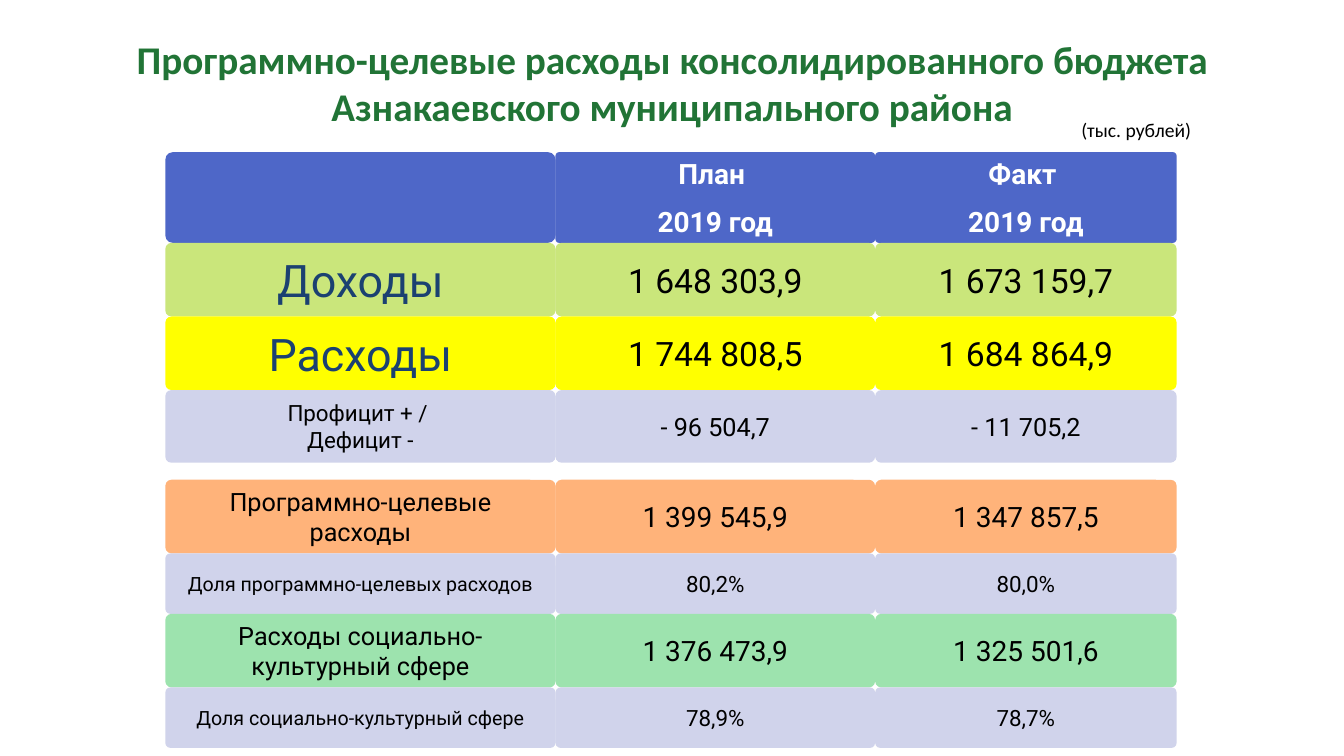
from pptx import Presentation
from pptx.dml.color import RGBColor
from pptx.enum.shapes import MSO_SHAPE
from pptx.enum.text import MSO_ANCHOR, MSO_AUTO_SIZE, PP_ALIGN
from pptx.util import Inches, Pt

GREEN_TITLE = RGBColor(0x21, 0x74, 0x36)
NAVY = RGBColor(0x1B, 0x41, 0x71)
BLACK = RGBColor(0x00, 0x00, 0x00)
WHITE = RGBColor(0xFF, 0xFF, 0xFF)
BLUE = RGBColor(0x4E, 0x67, 0xC8)
LIME = RGBColor(0xCA, 0xE6, 0x7B)
YELLOW = RGBColor(0xFF, 0xFF, 0x00)
LAVENDER = RGBColor(0xD0, 0xD3, 0xEB)
ORANGE = RGBColor(0xFF, 0xB3, 0x7A)
MINT = RGBColor(0x9D, 0xE3, 0xAE)

COLUMN_WIDTHS = (3.87, 3.17, 2.99)
HEADER_HEIGHT = 0.9
HEADERS = ("", "План \n2019 год", "Факт \n2019 год")
SECTION_GAP = 0.17

# Height, fill, label size, label colour, value size, texts
BALANCE_ROWS = (
    (0.73, LIME, 32, NAVY, 24, ("Доходы", "1 648 303,9", "1 673 159,7")),
    (0.73, YELLOW, 32, NAVY, 24, ("Расходы", "1 744 808,5", "1 684 864,9")),
    (0.72, LAVENDER, 16, BLACK, 18,
     ("Профицит + / \nДефицит -", "- 96 504,7", "- 11 705,2")),
)
PROGRAM_ROWS = (
    (0.73, ORANGE, 18, BLACK, 20,
     ("Программно-целевые расходы", "1 399 545,9", "1 347 857,5")),
    (0.6, LAVENDER, 14, BLACK, 16,
     ("Доля программно-целевых расходов", "80,2%", "80,0%")),
    (0.73, MINT, 18, BLACK, 20,
     ("Расходы социально-культурный сфере", "1 376 473,9", "1 325 501,6")),
    (0.6, LAVENDER, 14, BLACK, 16,
     ("Доля социально-культурный сфере", "78,9%", "78,7%")),
)


def write_text(text_frame, text, size, color, font="Roboto", bold=False, space_after=0):
    for index, line in enumerate(text.split("\n")):
        paragraph = text_frame.paragraphs[0] if index == 0 else text_frame.add_paragraph()
        paragraph.alignment = PP_ALIGN.CENTER
        paragraph.space_after = Pt(space_after)
        run = paragraph.add_run()
        run.text = line
        run.font.name = font
        run.font.size = Pt(size)
        run.font.bold = bold
        run.font.color.rgb = color


def add_caption(slide, left, top, width, height, text, **text_format):
    text_box = slide.shapes.add_textbox(
        Inches(left), Inches(top), Inches(width), Inches(height))
    text_box.text_frame.word_wrap = False
    text_box.text_frame.auto_size = MSO_AUTO_SIZE.SHAPE_TO_FIT_TEXT
    write_text(text_box.text_frame, text, font="Calibri", **text_format)


def add_cell(slide, left, top, width, height, fill, text, rounding=0.083, **text_format):
    shape = slide.shapes.add_shape(
        MSO_SHAPE.ROUNDED_RECTANGLE,
        Inches(left), Inches(top), Inches(width), Inches(height))
    shape.adjustments[0] = rounding
    shape.shadow.inherit = False
    shape.fill.solid()
    shape.fill.fore_color.rgb = fill
    shape.line.fill.background()
    text_frame = shape.text_frame
    text_frame.word_wrap = True
    text_frame.vertical_anchor = MSO_ANCHOR.MIDDLE
    text_frame.margin_left = text_frame.margin_right = Inches(0.12)
    if text:
        write_text(text_frame, text, **text_format)


def column_boxes(left):
    for index, width in enumerate(COLUMN_WIDTHS):
        yield left + sum(COLUMN_WIDTHS[:index]), width


def add_header(slide, left, top):
    for (cell_left, width), text in zip(column_boxes(left), HEADERS):
        add_cell(slide, cell_left, top, width, HEADER_HEIGHT, BLUE, text,
                 rounding=0.04 if text else 0.083,
                 size=20, color=WHITE, bold=True, space_after=10)


def add_rows(slide, left, top, rows):
    """Stack the rows and return the bottom edge."""
    for height, fill, label_size, label_color, value_size, texts in rows:
        label_format = dict(size=label_size, color=label_color)
        value_format = dict(size=value_size, color=BLACK, space_after=10)
        formats = (label_format, value_format, value_format)
        for (cell_left, width), text, text_format in zip(column_boxes(left), texts, formats):
            add_cell(slide, cell_left, top, width, height, fill, text, **text_format)
        top += height
    return top


def build_budget_slide(presentation):
    slide = presentation.slides.add_slide(presentation.slide_layouts[6])

    # Title and unit
    add_caption(slide, 1.16, 0.3, 11.01, 1.04,
                "Программно-целевые расходы консолидированного бюджета\n"
                "Азнакаевского муниципального района",
                size=28, color=GREEN_TITLE, bold=True)
    add_caption(slide, 10.62, 1.12, 1.3, 0.34, "(тыс. рублей)", size=14, color=BLACK)

    # Budget grid
    left, top = 1.64, 1.51
    add_header(slide, left, top)
    bottom = add_rows(slide, left, top + HEADER_HEIGHT, BALANCE_ROWS)
    add_rows(slide, left, bottom + SECTION_GAP, PROGRAM_ROWS)


def main():
    presentation = Presentation()
    presentation.slide_width = Inches(13.33)
    presentation.slide_height = Inches(7.5)
    build_budget_slide(presentation)
    presentation.save("out.pptx")


if __name__ == "__main__":
    main()
